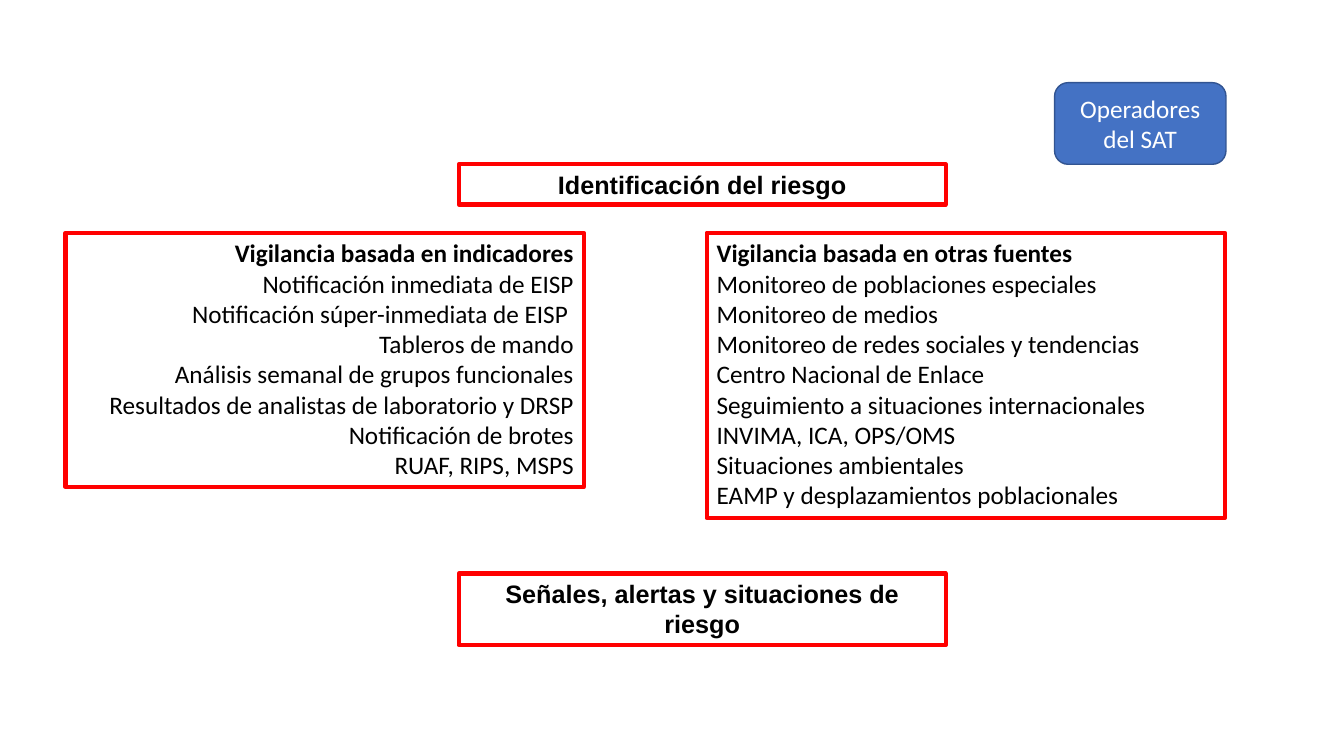
from pptx import Presentation
from pptx.dml.color import RGBColor
from pptx.enum.shapes import MSO_SHAPE as Shape
from pptx.enum.text import MSO_ANCHOR as Anchor, MSO_AUTO_SIZE as AutoSize, PP_ALIGN as Align
from pptx.util import Inches, Pt

RED = RGBColor(0xFF, 0x00, 0x00)
BLACK = RGBColor(0x00, 0x00, 0x00)
WHITE = RGBColor(0xFF, 0xFF, 0xFF)
BLUE = RGBColor(0x44, 0x72, 0xC4)
DARK_BLUE = RGBColor(0x32, 0x54, 0x91)

INDICATORS = [
    "Vigilancia basada en indicadores",
    "Notificación inmediata de EISP",
    "Notificación súper-inmediata de EISP ",
    "Tableros de mando",
    "Análisis semanal de grupos funcionales",
    "Resultados de analistas de laboratorio y DRSP",
    "Notificación de brotes",
    "RUAF, RIPS, MSPS",
]
OTHER_SOURCES = [
    "Vigilancia basada en otras fuentes",
    "Monitoreo de poblaciones especiales",
    "Monitoreo de medios",
    "Monitoreo de redes sociales y tendencias",
    "Centro Nacional de Enlace",
    "Seguimiento a situaciones internacionales",
    "INVIMA, ICA, OPS/OMS",
    "Situaciones ambientales",
    "EAMP y desplazamientos poblacionales",
]


class RiskSlide:
    heading_font = "Arial"
    body_font = "Calibri"
    text_size = Pt(18)

    def __init__(self, presentation):
        self.slide = presentation.slides.add_slide(presentation.slide_layouts[6])

    def fill_text(self, shape, lines, align, font_name, color, bold_first):
        frame = shape.text_frame
        frame.word_wrap = True
        frame.text = "\n".join(lines)
        for index, paragraph in enumerate(frame.paragraphs):
            paragraph.alignment = align
            font = paragraph.font
            font.name = font_name
            font.size = self.text_size
            font.bold = bold_first and index == 0
            font.color.rgb = color

    def framed_box(self, left, top, width, height, lines, align, font_name):
        box = self.slide.shapes.add_textbox(
            Inches(left), Inches(top), Inches(width), Inches(height))
        box.line.color.rgb = RED
        box.line.width = Pt(3)
        self.fill_text(box, lines, align, font_name, BLACK, True)
        box.text_frame.auto_size = AutoSize.SHAPE_TO_FIT_TEXT

    def heading(self, top, height, text):
        self.framed_box(4.55, top, 4.83, height, [text], Align.CENTER, self.heading_font)

    def source_list(self, left, height, lines, align):
        self.framed_box(left, 2.31, 5.14, height, lines, align, self.body_font)

    def badge(self, left, top, width, height, text):
        badge = self.slide.shapes.add_shape(
            Shape.ROUNDED_RECTANGLE,
            Inches(left), Inches(top), Inches(width), Inches(height))
        badge.shadow.inherit = False
        badge.fill.solid()
        badge.fill.fore_color.rgb = BLUE
        badge.line.color.rgb = DARK_BLUE
        badge.line.width = Pt(1)
        badge.text_frame.vertical_anchor = Anchor.MIDDLE
        self.fill_text(badge, [text], Align.CENTER, self.body_font, WHITE, False)


def main():
    presentation = Presentation()
    presentation.slide_width = Inches(13.33)
    presentation.slide_height = Inches(7.5)
    risk = RiskSlide(presentation)
    risk.heading(1.63, 0.4, "Identificación del riesgo")
    risk.heading(5.69, 0.71, "Señales, alertas y situaciones de riesgo")
    risk.source_list(0.65, 2.52, INDICATORS, Align.RIGHT)
    risk.source_list(7.01, 2.83, OTHER_SOURCES, Align.LEFT)
    risk.badge(10.46, 0.82, 1.7, 0.81, "Operadores del SAT")
    presentation.save("out.pptx")


if __name__ == "__main__":
    main()
